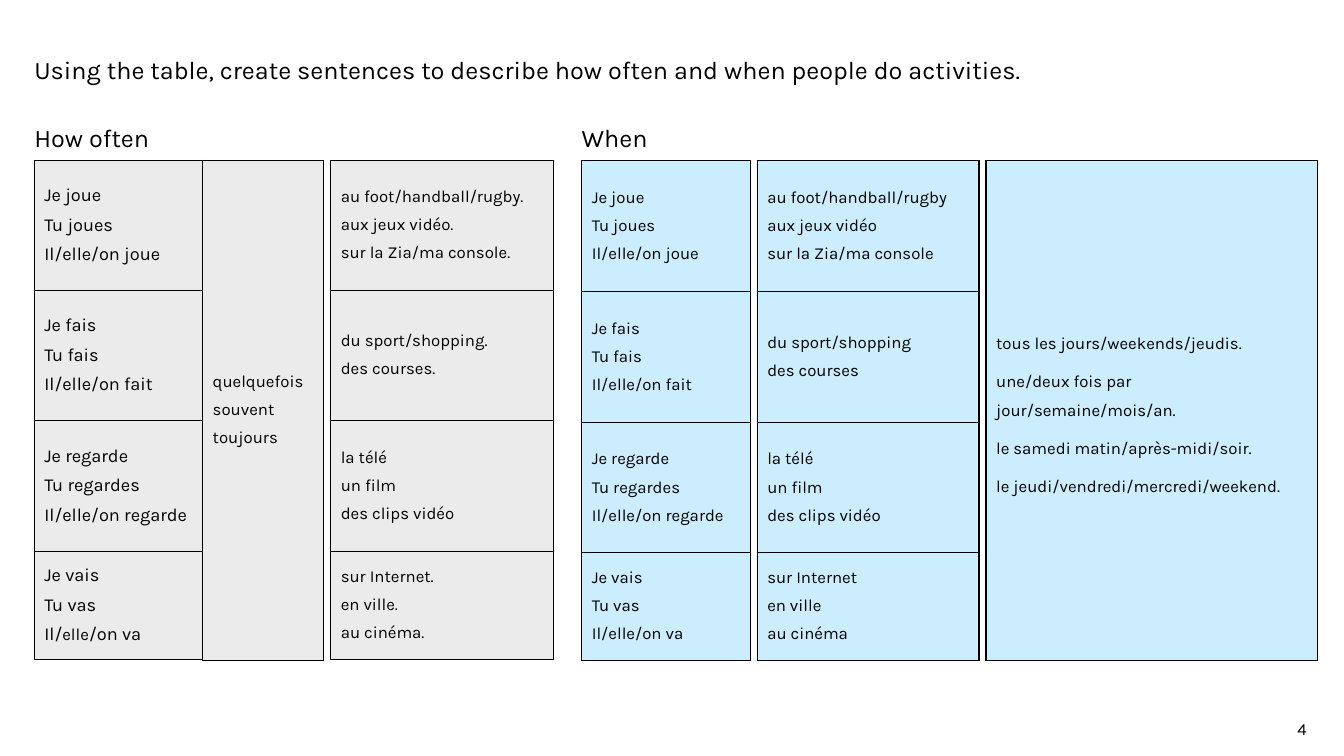
"""Build a slide of two sentence tables on how often and when people do activities."""
from lxml.etree import SubElement
from pptx import Presentation
from pptx.dml.color import RGBColor as Color
from pptx.enum.text import MSO_ANCHOR as Anchor, MSO_AUTO_SIZE as AutoSize, PP_ALIGN as Align
from pptx.oxml.ns import qn
from pptx.util import Inches, Pt

THEME = {
    "font": "Karla",
    "ink": "000000",
    "often": "EBEBEB",
    "when": "CBEDFD",
    "heading": 18,
    "large": 13,
    "body": 12,
}
LEFT, WHEN_LEFT, GAP = 0.34, 5.77, 0.07
TABLE_TOP, TABLE_HEIGHT, HEADING_TOP = 1.59, 4.96, 1.21
OFTEN_ROWS = [1.29, 1.29, 1.3, 1.07]
WHEN_ROWS = [1.3, 1.3, 1.29, 1.07]

VERBS = [
    ["Je joue", "Tu joues", "Il/elle/on joue"],
    ["Je fais", "Tu fais", "Il/elle/on fait"],
    ["Je regarde", "Tu regardes", "Il/elle/on regarde"],
    ["Je vais", "Tu vas", "Il/|elle|/on va"],
]
ACTIVITIES = [
    ["au foot/handball/rugby", "aux jeux vidéo", "sur la Zia/ma console"],
    ["du sport/shopping", "des courses"],
    ["la télé", "un film", "des clips vidéo"],
    ["sur Internet", "en ville", "au cinéma"],
]
ENDED_ACTIVITIES = [
    ACTIVITIES[0][:0] + [f"{line}." for line in ACTIVITIES[0]],
    [f"{line}." for line in ACTIVITIES[1]],
    ACTIVITIES[2],
    [f"{line}." for line in ACTIVITIES[3]],
]
FREQUENCIES = [["quelquefois", "souvent", "toujours"]]
TIMES = [[
    "tous les jours/weekends/jeudis.",
    "une/deux fois par jour/semaine/mois/an.",
    "le samedi matin/après-midi/soir.",
    "le jeudi/vendredi/mercredi/weekend.",
]]


def write(frame, lines, size, paragraph_format):
    """Write one paragraph a line, with parts between bars at body size."""
    for number, line in enumerate(lines):
        paragraph = frame.add_paragraph() if number else frame.paragraphs[0]
        for name, value in paragraph_format.items():
            setattr(paragraph, name, value)
        for part, text in enumerate(line.split("|")):
            run = paragraph.add_run()
            run.text = text
            run.font.name = THEME["font"]
            run.font.size = Pt(THEME["body"] if part % 2 else size)
            run.font.color.rgb = Color.from_string(THEME["ink"])


def border(cell):
    """Draw a thin line on each side of a cell."""
    properties = cell._tc.get_or_add_tcPr()
    for side in ("a:lnL", "a:lnR", "a:lnT", "a:lnB"):
        line = SubElement(properties, qn(side), w=str(Pt(1)))
        fill = SubElement(line, qn("a:solidFill"))
        SubElement(fill, qn("a:srgbClr"), val=THEME["ink"])


presentation = Presentation()
presentation.slide_width = Inches(13.33)
presentation.slide_height = Inches(7.5)
slide = presentation.slides.add_slide(presentation.slide_layouts[5])

labels = [
    ("Using the table, create sentences to describe how often and when people do activities.",
     (LEFT, 0.54, 12.1, 0.41), "heading", Align.LEFT, True),
    ("How often", (LEFT, HEADING_TOP, 1.59, 0.38), "heading", Align.LEFT, False),
    ("When", (WHEN_LEFT, HEADING_TOP, 1, 0.32), "heading", Align.LEFT, False),
    ("4", (12.17, 7.13, 0.79, 0.2), "body", Align.RIGHT, True),
]
for number, (text, place, size, alignment, wrap) in enumerate(labels):
    box = Inches(0), Inches(0), Inches(1), Inches(1)
    shape = slide.shapes.add_textbox(*box) if number else slide.shapes.title
    for name, value in zip(("left", "top", "width", "height"), place):
        setattr(shape, name, Inches(value))
    frame_format = {
        "margin_left": 0, "margin_top": 0, "margin_right": 0, "margin_bottom": 0,
        "word_wrap": wrap, "auto_size": AutoSize.NONE, "vertical_anchor": Anchor.TOP,
    }
    for name, value in frame_format.items():
        setattr(shape.text_frame, name, value)
    write(shape.text_frame, [text], THEME[size], {"alignment": alignment, "space_before": Pt(0)})

blocks = [
    (LEFT, "often", [
        (1.7, -0.03, OFTEN_ROWS, VERBS, "large", 1),
        (1.2, GAP, [TABLE_HEIGHT], FREQUENCIES, "body", 1),
        (2.21, GAP, OFTEN_ROWS, ENDED_ACTIVITIES, "body", 1),
    ]),
    (WHEN_LEFT, "when", [
        (1.67, GAP, WHEN_ROWS, VERBS, "body", 1),
        (2.2, GAP, WHEN_ROWS, ACTIVITIES, "body", 1),
        (3.29, GAP, [TABLE_HEIGHT], TIMES, "body", 1.5),
    ]),
]
for left, fill, columns in blocks:
    for width, gap, heights, entries, size, spacing in columns:
        table = slide.shapes.add_table(
            len(entries), 1, Inches(left), Inches(TABLE_TOP), Inches(width), Inches(TABLE_HEIGHT)
        ).table
        table.first_row = table.horz_banding = False
        for row, height, lines in zip(table.rows, heights, entries):
            row.height = Inches(height)
            cell = row.cells[0]
            border(cell)
            cell.fill.solid()
            cell.fill.fore_color.rgb = Color.from_string(THEME[fill])
            cell.vertical_anchor = Anchor.MIDDLE
            write(cell.text_frame, lines, THEME[size],
                  {"space_after": Pt(6), "line_spacing": spacing})
        left += width + gap

presentation.save("out.pptx")
